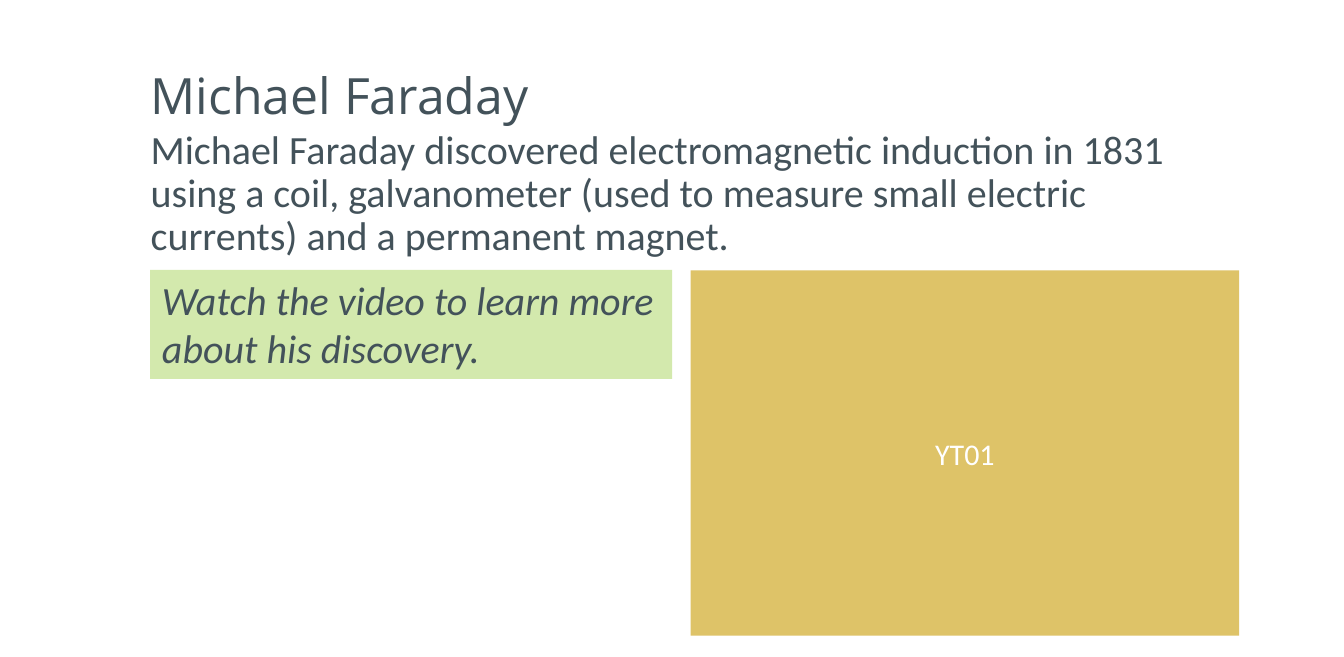
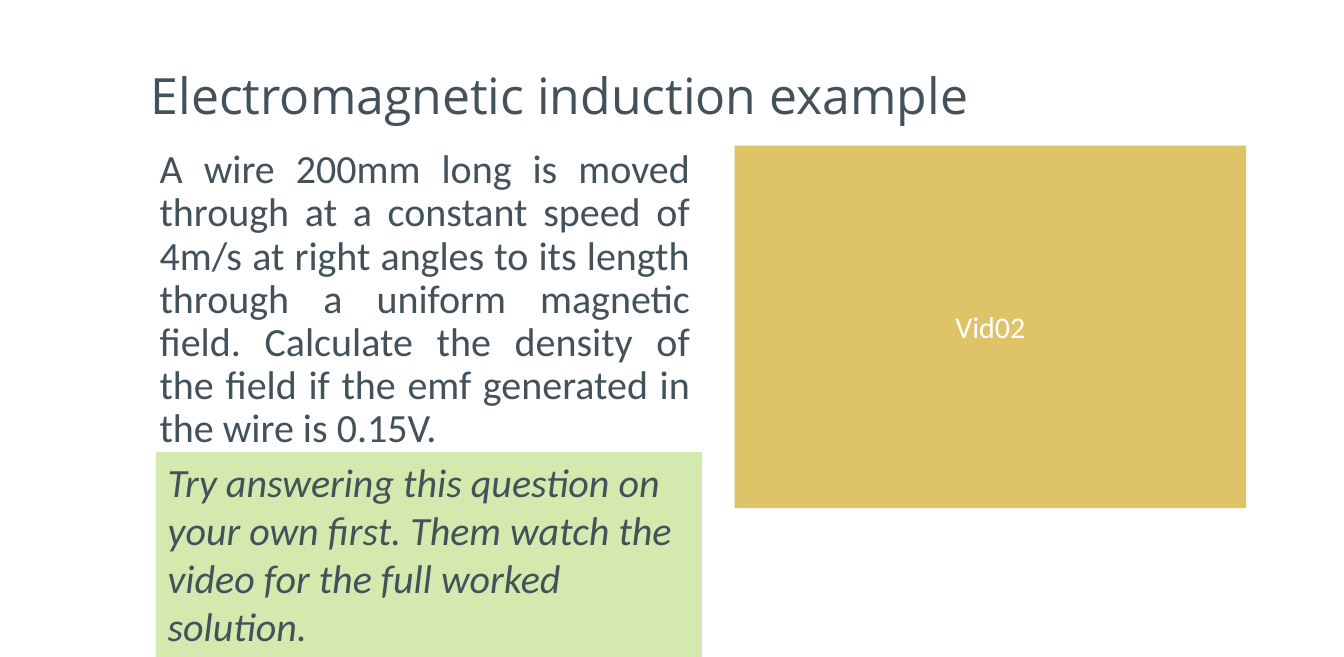
from dataclasses import dataclass

from pptx import Presentation
from pptx.dml import color
from pptx.enum import shapes, text
from pptx.util import Cm, Pt


# Shared look
@dataclass(frozen=True)
class Theme:
    ink: str = "43525A"
    note_fill: str = "D3E9AD"
    video_fill: str = "DEC368"
    video_ink: str = "FFFFFF"
    title_font: str = "Open Sans"
    body_font: str = "Calibri"
    title_size: float = 30
    body_size: float = 24
    label_size: float = 18
    line_spacing: float = 0.9
    body_space_before: float = 7.3


@dataclass(frozen=True)
class Box:
    left: float
    top: float
    width: float
    height: float

    def lengths(self) -> tuple[Cm, Cm, Cm, Cm]:
        return Cm(self.left), Cm(self.top), Cm(self.width), Cm(self.height)


@dataclass(frozen=True)
class Style:
    font: str
    size: float
    ink: str
    fill: str | None = None
    italic: bool = False
    line_spacing: float | None = None
    space_before: float = 0
    anchor: text.MSO_ANCHOR = text.MSO_ANCHOR.TOP


@dataclass(frozen=True)
class Block:
    words: str
    box: Box
    style: Style
    align: text.PP_ALIGN = text.PP_ALIGN.LEFT


@dataclass(frozen=True)
class Lesson:
    title: str
    blocks: tuple[Block, ...]


THEME = Theme()
TITLE = Style(THEME.title_font, THEME.title_size, THEME.ink,
              line_spacing=THEME.line_spacing, anchor=text.MSO_ANCHOR.MIDDLE)
BODY = Style(THEME.body_font, THEME.body_size, THEME.ink,
             line_spacing=THEME.line_spacing,
             space_before=THEME.body_space_before)
NOTE = Style(THEME.body_font, THEME.body_size, THEME.ink,
             fill=THEME.note_fill, italic=True)
VIDEO = Style(THEME.body_font, THEME.label_size, THEME.video_ink,
              fill=THEME.video_fill, anchor=text.MSO_ANCHOR.MIDDLE)
TITLE_BOX = Box(2.94, 0.74, 21.31, 2.69)

# Content
LESSONS = (
    Lesson("Michael Faraday", (
        Block("Michael Faraday discovered electromagnetic induction in 1831 "
              "using a coil, galvanometer (used to measure small electric "
              "currents) and a permanent magnet.",
              Box(2.94, 2.62, 22.07, 3), BODY),
        Block("Watch the video to learn more about his discovery.",
              Box(3.18, 5.71, 11.05, 2.31), NOTE),
        Block("YT01", Box(14.62, 5.72, 11.61, 7.73), VIDEO,
              text.PP_ALIGN.CENTER),
    )),
    Lesson("Electromagnetic induction example", (
        Block("A wire 200mm long is moved through at a constant speed of 4m/s "
              "at right angles to its length through a uniform magnetic "
              "field. Calculate the density of the field if the emf generated "
              "in the wire is 0.15V.",
              Box(3.13, 3.03, 11.73, 3.91), BODY, text.PP_ALIGN.JUSTIFY),
        Block("Vid02", Box(15.55, 3.08, 10.83, 7.67), VIDEO,
              text.PP_ALIGN.CENTER),
        Block("Try answering this question on your own first. Them watch the "
              "video for the full worked solution.",
              Box(3.3, 9.56, 11.56, 4.36), NOTE),
    )),
)


# Drawing
def draw_block(slide, block: Block) -> None:
    style = block.style
    if style.fill:
        panel = slide.shapes.add_shape(shapes.MSO_SHAPE.RECTANGLE,
                                       *block.box.lengths())
        panel.shadow.inherit = False
        panel.fill.solid()
        panel.fill.fore_color.rgb = color.RGBColor.from_string(style.fill)
        panel.line.fill.background()
    else:
        panel = slide.shapes.add_textbox(*block.box.lengths())

    frame = panel.text_frame
    frame.word_wrap = True
    frame.vertical_anchor = style.anchor
    paragraph = frame.paragraphs[0]
    paragraph.text = block.words
    paragraph.alignment = block.align
    paragraph.line_spacing = style.line_spacing
    paragraph.space_before = Pt(style.space_before)
    font = paragraph.font
    font.name = style.font
    font.size = Pt(style.size)
    font.italic = style.italic
    font.color.rgb = color.RGBColor.from_string(style.ink)


def draw_lesson(deck, lesson: Lesson) -> None:
    slide = deck.slides.add_slide(deck.slide_layouts[6])
    draw_block(slide, Block(lesson.title, TITLE_BOX, TITLE))
    for block in lesson.blocks:
        draw_block(slide, block)


def main() -> None:
    deck = Presentation()
    deck.slide_width, deck.slide_height = Cm(28.45), Cm(13.9)
    for lesson in LESSONS:
        draw_lesson(deck, lesson)
    deck.save("out.pptx")


if __name__ == "__main__":
    main()
